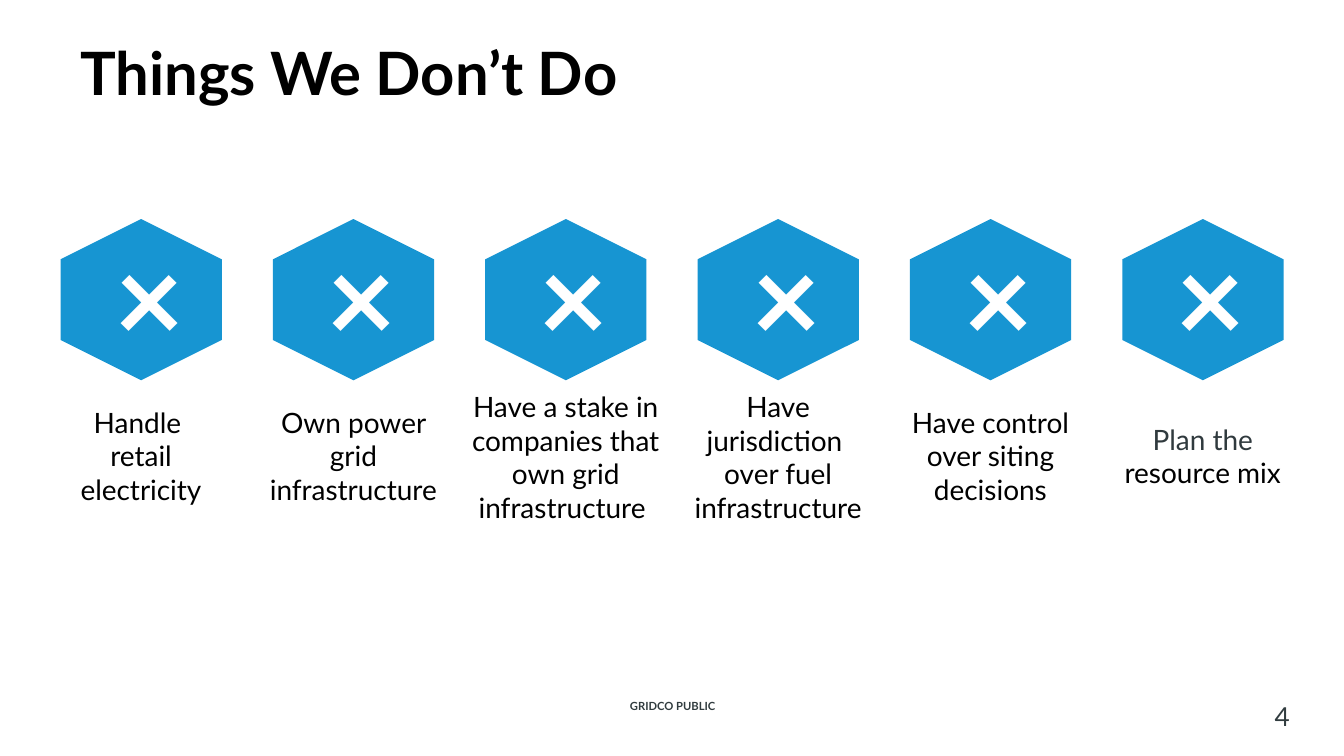
import pptx
import pptx.util
from dataclasses import dataclass
from pptx.dml.color import RGBColor
from pptx.enum.shapes import MSO_SHAPE
from pptx.enum.text import MSO_ANCHOR, MSO_AUTO_SIZE, PP_ALIGN
from pptx.util import Inches


@dataclass(frozen=True)
class Theme:
    font: str = "Lato"
    black: str = "000000"
    white: str = "FFFFFF"
    blue: str = "1795D2"
    slate: str = "313C3F"
    dark_grey: str = "303A3E"
    title_size: float = 32
    cross_size: float = 64.7
    label_size: float = 15
    number_size: float = 14
    footer_size: float = 6


theme = Theme()


def write_text(shape, paragraphs, size, bold=False, align=PP_ALIGN.CENTER,
               anchor=MSO_ANCHOR.MIDDLE, wrap=True, margin=None):
    """Fill a shape with paragraphs, each a list of (text, colour) runs."""
    frame = shape.text_frame
    frame.word_wrap = wrap
    frame.vertical_anchor = anchor
    if margin is not None:
        frame.margin_left = frame.margin_right = margin
        frame.margin_top = frame.margin_bottom = margin
    for index, runs in enumerate(paragraphs):
        paragraph = frame.paragraphs[0] if index == 0 else frame.add_paragraph()
        paragraph.alignment = align
        for text, colour in runs:
            run = paragraph.add_run()
            run.text = text
            run.font.name = theme.font
            run.font.size = pptx.util.Pt(size)
            run.font.bold = bold
            run.font.color.rgb = RGBColor.from_string(colour)


def add_block(kind, left, top, width, height, colour):
    """Add a filled shape without outline or shadow."""
    shape = slide.shapes.add_shape(kind, Inches(left), Inches(top), Inches(width), Inches(height))
    shape.shadow.inherit = False
    shape.fill.solid()
    shape.fill.fore_color.rgb = RGBColor.from_string(colour)
    shape.line.fill.background()
    return shape


# Widescreen slide, 16 to 9
presentation = pptx.Presentation()
presentation.slide_width = Inches(10)
presentation.slide_height = Inches(10 * 9 / 16)
slide = presentation.slides.add_slide(presentation.slide_layouts[6])

# Footer, title and slide number
footer = slide.shapes.add_textbox(Inches(4.27), Inches(5.17), Inches(1.47), Inches(0.17))
write_text(footer, [[("GRIDCO PUBLIC", theme.slate)]], theme.footer_size, bold=True)

title = slide.shapes.add_textbox(Inches(0.5), Inches(0.06), Inches(9), Inches(0.94))
write_text(title, [[("Things We Don’t Do", theme.black)]], theme.title_size,
           bold=True, align=PP_ALIGN.LEFT)

number = slide.shapes.add_textbox(Inches(9.33), Inches(5.22), Inches(0.42), Inches(0.22))
write_text(number, [[("4", theme.slate)]], theme.number_size, margin=0)

# Six columns: the label's anchor and its paragraphs
columns = [
    (MSO_ANCHOR.MIDDLE, [[("Handle ", theme.black)], [("retail electricity", theme.black)]]),
    (MSO_ANCHOR.MIDDLE, [[("Own power grid infrastructure", theme.black)]]),
    (MSO_ANCHOR.TOP, [[("Have a stake in companies that own grid infrastructure ", theme.black)]]),
    (MSO_ANCHOR.TOP, [[("Have jurisdiction ", theme.black)],
                      [("over fuel infrastructure", theme.black)]]),
    (MSO_ANCHOR.MIDDLE, [[("Have control over siting decisions", theme.black)]]),
    (MSO_ANCHOR.MIDDLE, [[("Plan the", theme.dark_grey), (" resource mix", theme.black)]]),
]
column_step = 1.58

for index, (anchor, paragraphs) in enumerate(columns):
    left = 0.35 + index * column_step

    # Hexagon with a cross
    hexagon = add_block(MSO_SHAPE.HEXAGON, left + 0.1, 1.63, 1.2, 1.2, theme.blue)
    hexagon.rotation = 90
    cross = slide.shapes.add_textbox(Inches(left + 0.4), Inches(1.61), Inches(0.61), Inches(0.88))
    write_text(cross, [[("×", theme.white)]], theme.cross_size, bold=True,
               anchor=MSO_ANCHOR.TOP, wrap=False)
    cross.text_frame.auto_size = MSO_AUTO_SIZE.SHAPE_TO_FIT_TEXT

    # Label below
    label = add_block(MSO_SHAPE.RECTANGLE, left, 2.9, 1.4, 0.98, theme.white)
    write_text(label, paragraphs, theme.label_size, anchor=anchor, margin=0)

presentation.save("out.pptx")
